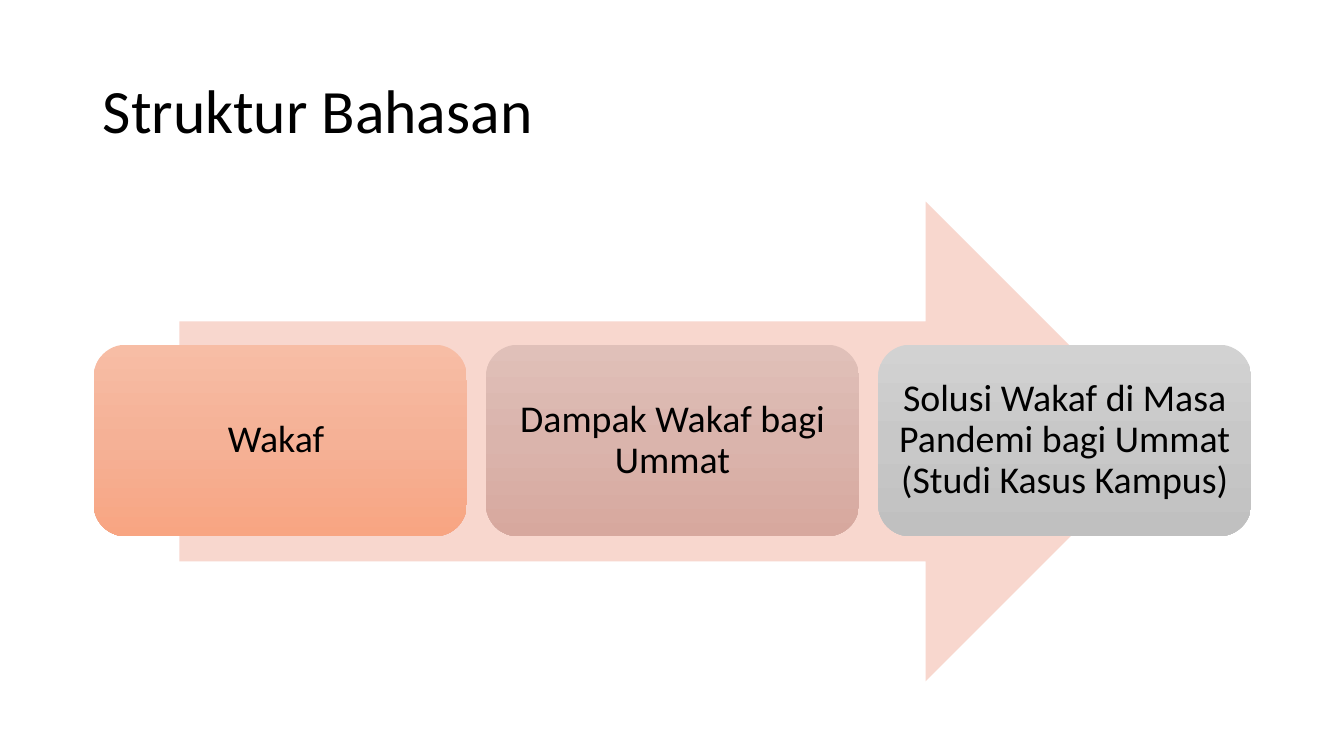
from copy import deepcopy

from pptx import Presentation
from pptx.dml.color import RGBColor
from pptx.enum.shapes import MSO_SHAPE
from pptx.enum.text import MSO_ANCHOR, PP_ALIGN, MSO_AUTO_SIZE
from pptx.oxml.ns import qn
from pptx.util import Inches, Pt

COLORS = {
    "text": "000000",
    "arrow": "F8D7CE",
    "orange": ["F7BDA5", "F5B196", "F8A582"],
    "rose": ["E0C0B9", "DAB4AC", "D7A89E"],
    "grey": ["D2D2D2", "C8C8C8", "C0C0C0"],
}
TOPICS = [
    ("Wakaf ", "orange"),
    ("Dampak Wakaf bagi Ummat", "rose"),
    ("Solusi Wakaf di Masa Pandemi bagi Ummat (Studi Kasus Kampus)", "grey"),
]
TOPIC_LEFT, TOPIC_STEP = 0.93, 3.89


def write(frame, text, size, align):
    frame.text = text
    frame_format = {
        "word_wrap": True,
        "auto_size": MSO_AUTO_SIZE.NONE,
        "vertical_anchor": MSO_ANCHOR.MIDDLE,
    }
    for name, value in frame_format.items():
        setattr(frame, name, value)
    paragraph = frame.paragraphs[0]
    for name, value in {"alignment": align, "line_spacing": 0.9}.items():
        setattr(paragraph, name, value)
    font = paragraph.runs[0].font
    for name, value in {"name": "Calibri", "size": Pt(size)}.items():
        setattr(font, name, value)
    font.color.rgb = RGBColor.from_string(COLORS["text"])


def add_plain_shape(kind, left, top, width, height):
    shape = slide.shapes.add_shape(
        kind, Inches(left), Inches(top), Inches(width), Inches(height)
    )
    shape.shadow.inherit = False
    shape.line.fill.background()
    return shape


deck = Presentation()
deck.slide_width, deck.slide_height = Inches(13.33), Inches(7.5)
slide = deck.slides.add_slide(deck.slide_layouts[5])

heading = slide.shapes.title
heading_box = {"left": 0.92, "top": 0.4, "width": 11.5, "height": 1.45}
for name, value in heading_box.items():
    setattr(heading, name, Inches(value))
write(heading.text_frame, "Struktur Bahasan", 44, PP_ALIGN.LEFT)

flow_arrow = add_plain_shape(MSO_SHAPE.RIGHT_ARROW, 1.78, 2, 9.78, 4.76)
flow_arrow.fill.solid()
flow_arrow.fill.fore_color.rgb = RGBColor.from_string(COLORS["arrow"])

for index, (label, tone) in enumerate(TOPICS):
    topic = add_plain_shape(
        MSO_SHAPE.ROUNDED_RECTANGLE, TOPIC_LEFT + index * TOPIC_STEP, 3.42, 3.7, 1.9
    )
    topic.fill.gradient()
    topic.fill.gradient_angle = 270
    stop_list = topic._element.spPr.find(qn("a:gradFill")).find(qn("a:gsLst"))
    stop_list.insert(1, deepcopy(stop_list[0]))
    for stop, position, shade in zip(
        topic.fill.gradient_stops, (0, 0.5, 1), COLORS[tone]
    ):
        stop.position = position
        stop.color.rgb = RGBColor.from_string(shade)
    for side in ("left", "top", "right", "bottom"):
        setattr(topic.text_frame, f"margin_{side}", Inches(0.11))
    write(topic.text_frame, label, 27, PP_ALIGN.CENTER)

deck.save("out.pptx")
